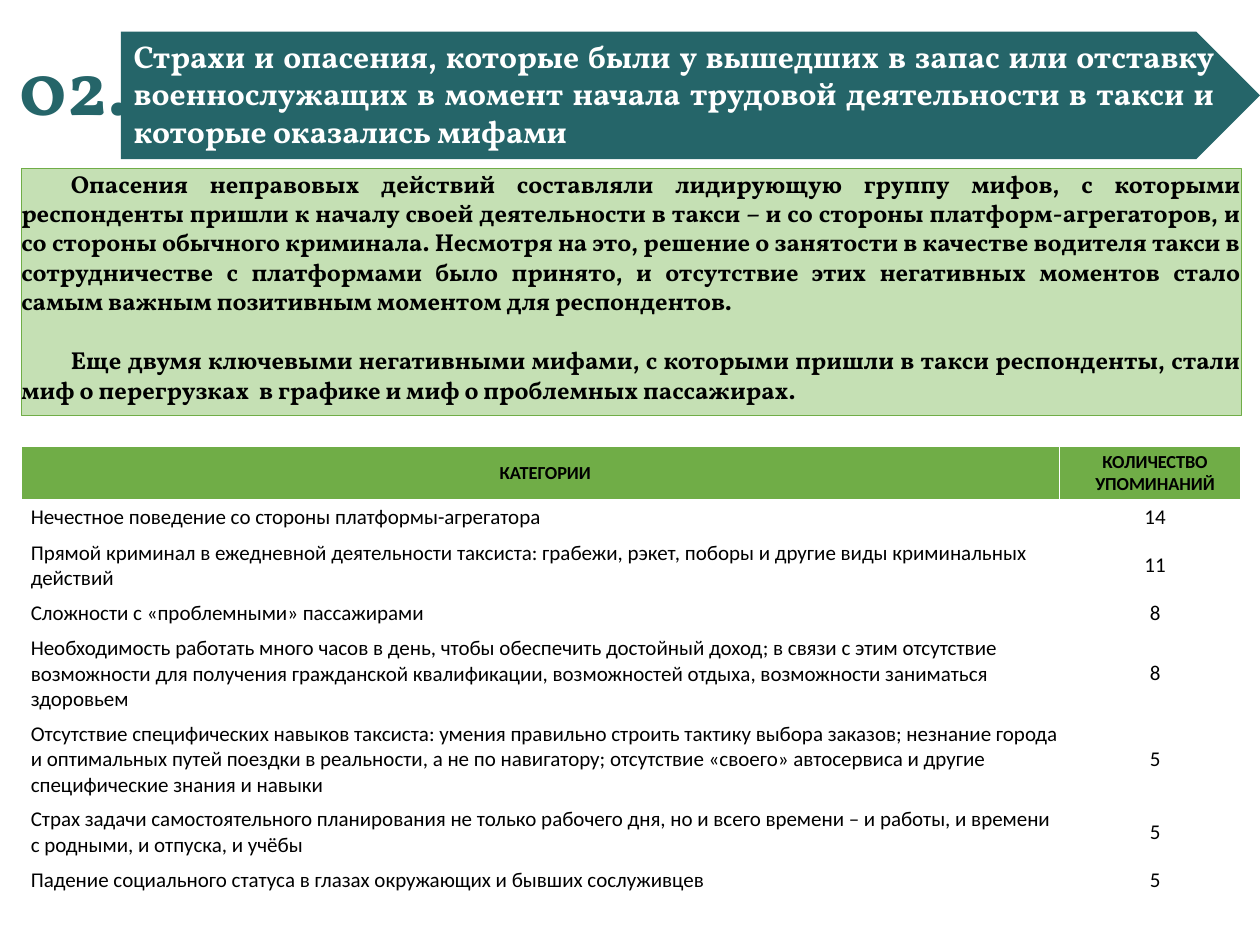
from lxml import etree
from pptx import Presentation
from pptx.dml.color import RGBColor
from pptx.enum.shapes import MSO_SHAPE as Shape
from pptx.enum.text import MSO_ANCHOR as Anchor, MSO_AUTO_SIZE as AutoSize, PP_ALIGN as Align
from pptx.oxml.ns import qn
from pptx.util import Cm, Pt

COLORS = {"teal": "256569", "green": "70AD47", "pale": "C5E0B4",
          "white": "FFFFFF", "black": "000000"}
SERIF, SANS = "Vollkorn", "Calibri"

TITLE = ("Страхи и опасения, которые были у вышедших в запас или отставку военнослужащих "
         "в момент начала трудовой деятельности в такси и которые оказались мифами")
SUMMARY = [
    "Опасения неправовых действий составляли лидирующую группу мифов, с которыми респонденты "
    "пришли к началу своей деятельности в такси – и со стороны платформ-агрегаторов, и со стороны "
    "обычного криминала. Несмотря на это, решение о занятости в качестве водителя такси в "
    "сотрудничестве с платформами было принято, и отсутствие этих негативных моментов стало самым "
    "важным позитивным моментом для респондентов.",
    "Еще двумя ключевыми негативными мифами, с которыми пришли в такси респонденты, стали миф "
    "о перегрузках  в графике и миф о проблемных пассажирах.",
]
HEADER = ("КАТЕГОРИИ", "КОЛИЧЕСТВО УПОМИНАНИЙ")
MYTHS = [
    ("Нечестное поведение со стороны платформы-агрегатора", 14),
    ("Прямой криминал в ежедневной деятельности таксиста: грабежи, рэкет, поборы и другие виды "
     "криминальных действий", 11),
    ("Сложности с «проблемными» пассажирами", 8),
    ("Необходимость работать много часов в день, чтобы обеспечить достойный доход; в связи с этим "
     "отсутствие возможности для получения гражданской квалификации, возможностей отдыха, "
     "возможности заниматься здоровьем", 8),
    ("Отсутствие специфических навыков таксиста: умения правильно строить тактику выбора заказов; "
     "незнание города и оптимальных путей поездки в реальности, а не по навигатору; отсутствие "
     "«своего» автосервиса и другие специфические знания и навыки", 5),
    ("Страх задачи самостоятельного планирования не только рабочего дня, но и всего времени – "
     "и работы, и времени с родными, и отпуска, и учёбы", 5),
    ("Падение социального статуса в глазах окружающих и бывших сослуживцев", 5),
]
COLUMN_WIDTHS = (20.93, 3.66)
ROW_HEIGHTS = (1.07, 0.71, 1.19, 0.71, 1.7, 1.7, 1.19, 0.71)


def rgb(name):
    return RGBColor.from_string(COLORS[name])


class SlideBuilder:
    def __init__(self, page):
        self.page = page

    def style(self, para, size, color, font=SERIF, bold=True, align=Align.LEFT):
        para.alignment = align
        para.font.name, para.font.size, para.font.bold = font, Pt(size), bold
        para.font.color.rgb = rgb(color)

    def shape(self, kind, at, fill, line=None):
        shape = self.page.shapes.add_shape(kind, *map(Cm, at))
        shape.shadow.inherit = False
        shape.fill.solid()
        shape.fill.fore_color.rgb = rgb(fill)
        if line:
            shape.line.color.rgb = rgb(line)
            shape.line.width = Pt(0.5)
        else:
            shape.line.fill.background()
        return shape

    def title(self, text, at, above):
        title = self.page.shapes.title
        title.left, title.top, title.width, title.height = map(Cm, at)
        above._element.addnext(title._element)
        frame = title.text_frame
        frame.text = text
        frame.word_wrap = True
        frame.auto_size = AutoSize.NONE
        frame.vertical_anchor = Anchor.TOP
        self.style(frame.paragraphs[0], 18, "white", align=Align.JUSTIFY)

    def panel(self, texts, at, gap):
        frame = self.shape(Shape.RECTANGLE, at, "pale", "green").text_frame
        frame.margin_left = frame.margin_top = frame.margin_right = frame.margin_bottom = 0
        frame.word_wrap = True
        frame.vertical_anchor = Anchor.TOP
        for i, text in enumerate(texts):
            para = frame.paragraphs[0] if i == 0 else frame.add_paragraph()
            para.text = text
            self.style(para, 14, "black", align=Align.JUSTIFY)
            para._p.get_or_add_pPr().set("indent", str(Cm(1)))
            if i:
                para.space_before = Pt(gap)

    def label(self, text, at, size, color):
        box = self.page.shapes.add_textbox(*map(Cm, at))
        box.text_frame.word_wrap = True
        box.text_frame.text = text
        self.style(box.text_frame.paragraphs[0], size, color)

    def borders(self, cell, color):
        props = cell._tc.get_or_add_tcPr()
        for side in ("lnL", "lnR", "lnT", "lnB"):
            line = etree.SubElement(props, qn(f"a:{side}"), w=str(Pt(1)))
            fill = etree.SubElement(line, qn("a:solidFill"))
            etree.SubElement(fill, qn("a:srgbClr"), val=COLORS[color])

    def table(self, rows, left, top, widths, heights):
        frame = self.page.shapes.add_table(len(rows), len(widths), Cm(left), Cm(top),
                                           Cm(sum(widths)), Cm(sum(heights)))
        table = frame.table
        table.horz_banding = False
        for column, width in zip(table.columns, widths):
            column.width = Cm(width)
        for i, (values, height) in enumerate(zip(rows, heights)):
            table.rows[i].height = Cm(height)
            for j, value in enumerate(values):
                self.cell(table.cell(i, j), value, is_header=i == 0, centred=i == 0 or j > 0)

    def cell(self, cell, value, is_header, centred):
        cell.text = str(value)
        cell.vertical_anchor = Anchor.MIDDLE
        cell.margin_left, cell.margin_right = Cm(0.19), 0
        cell.margin_top = cell.margin_bottom = Cm(0.1)
        self.borders(cell, "white")
        if is_header:
            cell.fill.solid()
            cell.fill.fore_color.rgb = rgb("green")
        else:
            cell.fill.background()
        self.style(cell.text_frame.paragraphs[0], 10.5 if is_header else 12, "black", SANS,
                   is_header, Align.CENTER if centred else Align.LEFT)


def main():
    deck = Presentation()
    deck.slide_width, deck.slide_height = Cm(25.4), Cm(19.05)
    builder = SlideBuilder(deck.slides.add_slide(deck.slide_layouts[5]))

    # Heading: arrow banner, title and section number
    banner = builder.shape(Shape.PENTAGON, (2.44, 0.64, 22.96, 2.57), "teal")
    builder.title(TITLE, (2.44, 0.61, 22.3, 2.57), above=banner)
    builder.label("02.", (0.15, 0.66, 3.07, 2.13), 44, "teal")

    # Summary panel
    builder.panel(SUMMARY, (0.43, 3.4, 24.59, 4.98), gap=16.8)

    # Table of myths by number of mentions
    builder.table([HEADER, *MYTHS], 0.43, 8.99, COLUMN_WIDTHS, ROW_HEIGHTS)

    deck.save("out.pptx")


if __name__ == "__main__":
    main()
